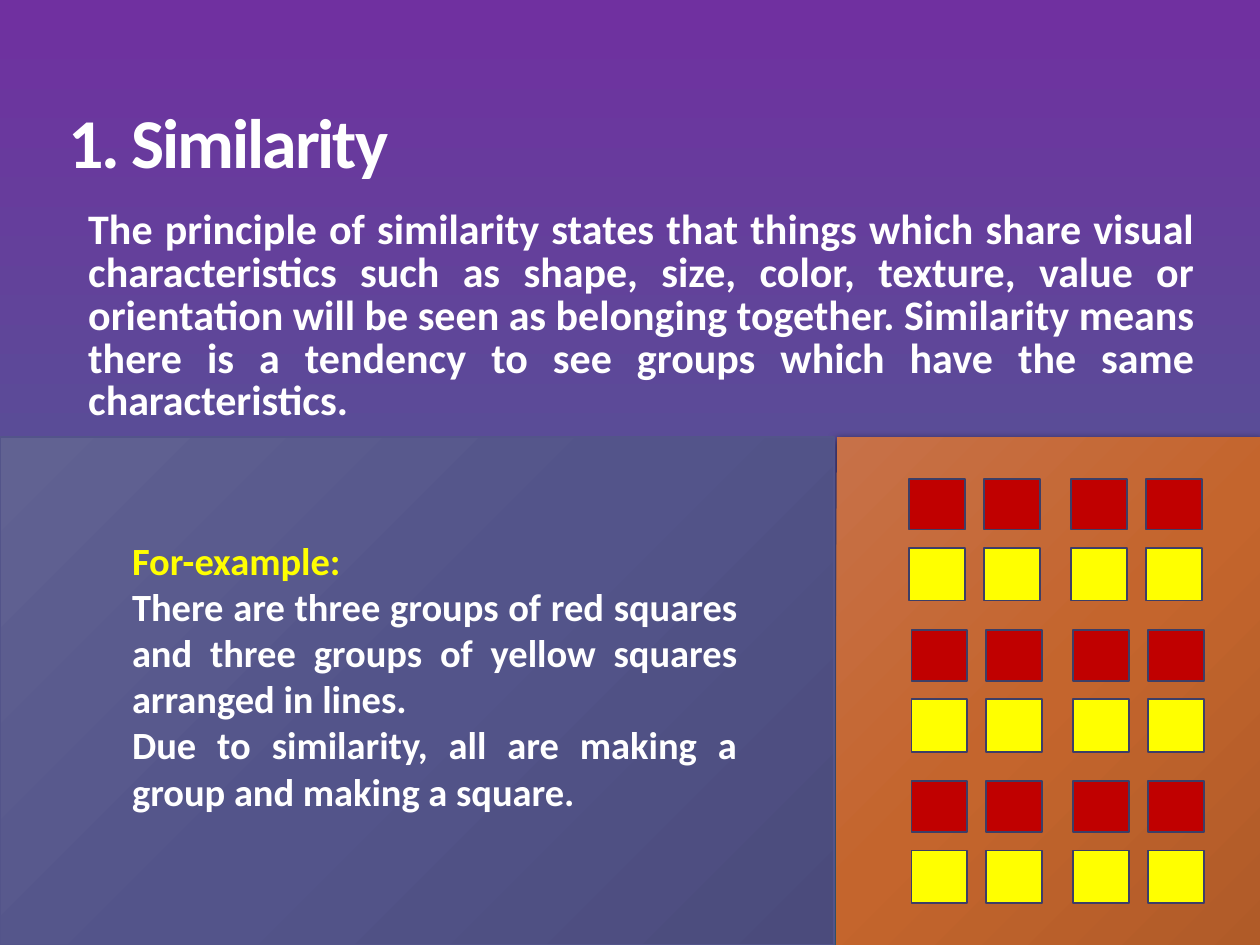
from copy import deepcopy

from lxml import etree
from pptx import Presentation
from pptx.dml.color import RGBColor
from pptx.enum import shapes, text
from pptx.oxml import ns
from pptx.util import Pt

WHITE = RGBColor(0xFF, 0xFF, 0xFF)
YELLOW = RGBColor(0xFF, 0xFF, 0x00)
RED = RGBColor(0xC0, 0x00, 0x00)
SQUARE_LINE = RGBColor(0x3D, 0x3E, 0x66)
SLATE = RGBColor(0x53, 0x54, 0x8A)
BACKGROUND = (RGBColor(0x70, 0x30, 0xA0), RGBColor(0x40, 0x6F, 0x8D))
SLATE_SHADES = (RGBColor(0x61, 0x62, 0x92), SLATE, RGBColor(0x4B, 0x4B, 0x7C))
ORANGE_SHADES = (RGBColor(0xC7, 0x71, 0x48), RGBColor(0xC4, 0x65, 0x2D),
                 RGBColor(0xB0, 0x5B, 0x28))

DEFINITION = (
    "The principle of similarity states that things which share visual "
    "characteristics such as shape, size, color, texture, value or "
    "orientation will be seen as belonging together. Similarity means there "
    "is a tendency to see groups which have the same characteristics.")
EXAMPLE = (
    ("For-example:", YELLOW),
    ("There are three groups of red squares and three groups of yellow "
     "squares arranged in lines.", WHITE),
    ("Due to similarity, all are making a group and making a square.", WHITE),
)

COLUMNS = (0, 42.8, 92.4, 135.4)
ROWS = ((0, 29, RED), (39.6, 30, YELLOW))  # offset, height, fill
GROUPS = ((519.6, 273.6), (520.8, 360), (520.8, 446.4))


class Deck:
    font = "Calibri"
    square_width = 31.9

    def __init__(self, prs):
        self.slide = prs.slides.add_slide(prs.slide_layouts[5])

    def gradient(self, fill, first, last, angle):
        """Set a two-colour gradient; the angle runs counter-clockwise."""
        fill.gradient()
        fill.gradient_angle = angle
        for stop, color, position in zip(fill.gradient_stops, (first, last), (0, 1)):
            stop.color.rgb = color
            stop.position = position

    def background(self, first, last):
        self.gradient(self.slide.background.fill, first, last, 270)

    def rectangle(self, parent, left, top, width, height):
        sp = parent.add_shape(shapes.MSO_SHAPE.RECTANGLE,
                              Pt(left), Pt(top), Pt(width), Pt(height))
        sp.shadow.inherit = False
        return sp

    def panel(self, left, top, width, height, shades, line=None):
        sp = self.rectangle(self.slide.shapes, left, top, width, height)
        first, middle, last = shades
        self.gradient(sp.fill, first, last, 315)
        start = next(sp.element.iter(ns.qn("a:gs")))
        center = deepcopy(start)
        center.set("pos", "50000")
        center.find(ns.qn("a:srgbClr")).set("val", str(middle))
        start.addnext(center)
        if line is None:
            sp.line.fill.background()
        else:
            sp.line.color.rgb = line
            sp.line.width = Pt(0.75)
        return sp

    def shadow(self, sp):
        effects = next(sp.element.iter(ns.qn("a:effectLst")))
        outer = etree.SubElement(
            effects, ns.qn("a:outerShdw"), blurRad=str(Pt(4.5)),
            dist=str(Pt(1.5)), dir="5400000", rotWithShape="0")
        color = etree.SubElement(outer, ns.qn("a:srgbClr"), val="000000")
        etree.SubElement(color, ns.qn("a:alpha"), val="63000")

    def square_group(self, left, top):
        group = self.slide.shapes.add_group_shape()
        for dy, height, color in ROWS:
            for dx in COLUMNS:
                sp = self.rectangle(group.shapes, left + dx, top + dy,
                                    self.square_width, height)
                sp.fill.solid()
                sp.fill.fore_color.rgb = color
                sp.line.color.rgb = SQUARE_LINE
                sp.line.width = Pt(1)

    def run(self, p, words, size, color):
        r = p.add_run()
        r.text = words
        r.font.name = self.font
        r.font.size = Pt(size)
        r.font.bold = True
        r.font.color.rgb = color
        return r

    def title(self, words, left, top, width, height):
        sp = self.slide.shapes.title
        sp.left, sp.top, sp.width, sp.height = map(Pt, (left, top, width, height))
        tf = sp.text_frame
        tf.vertical_anchor = text.MSO_ANCHOR.MIDDLE
        p = tf.paragraphs[0]
        p.alignment = text.PP_ALIGN.LEFT
        p.line_spacing = 0.85
        r = self.run(p, words, 40, WHITE)
        r.font._element.set("spc", "-120")

    def text_box(self, paragraphs, left, top, width, height, size, spacing=1):
        sp = self.slide.shapes.add_textbox(Pt(left), Pt(top), Pt(width), Pt(height))
        tf = sp.text_frame
        tf.word_wrap = True
        for i, (words, color) in enumerate(paragraphs):
            p = tf.add_paragraph() if i else tf.paragraphs[0]
            p.alignment = text.PP_ALIGN.JUSTIFY
            p.line_spacing = spacing
            self.run(p, words, size, color)
        return tf


def main():
    prs = Presentation()
    prs.slide_width, prs.slide_height = Pt(720), Pt(540)

    deck = Deck(prs)
    deck.background(*BACKGROUND)
    deck.shadow(deck.panel(478, 249.8, 243.4, 290.2, ORANGE_SHADES))
    deck.panel(0, 249.8, 476.6, 290.2, SLATE_SHADES, SLATE)
    deck.title("1. Similarity", 31.7, 18.7, 636.5, 130.3)

    definition = deck.text_box([(DEFINITION, WHITE)], 36, 116.6, 653.8, 387.4, 24, 0.85)
    definition.margin_left = Pt(14.4)
    example = deck.text_box(EXAMPLE, 68.4, 303.1, 360, 167, 22)
    example.auto_size = text.MSO_AUTO_SIZE.SHAPE_TO_FIT_TEXT

    for left, top in GROUPS:
        deck.square_group(left, top)
    prs.save("out.pptx")


if __name__ == "__main__":
    main()
